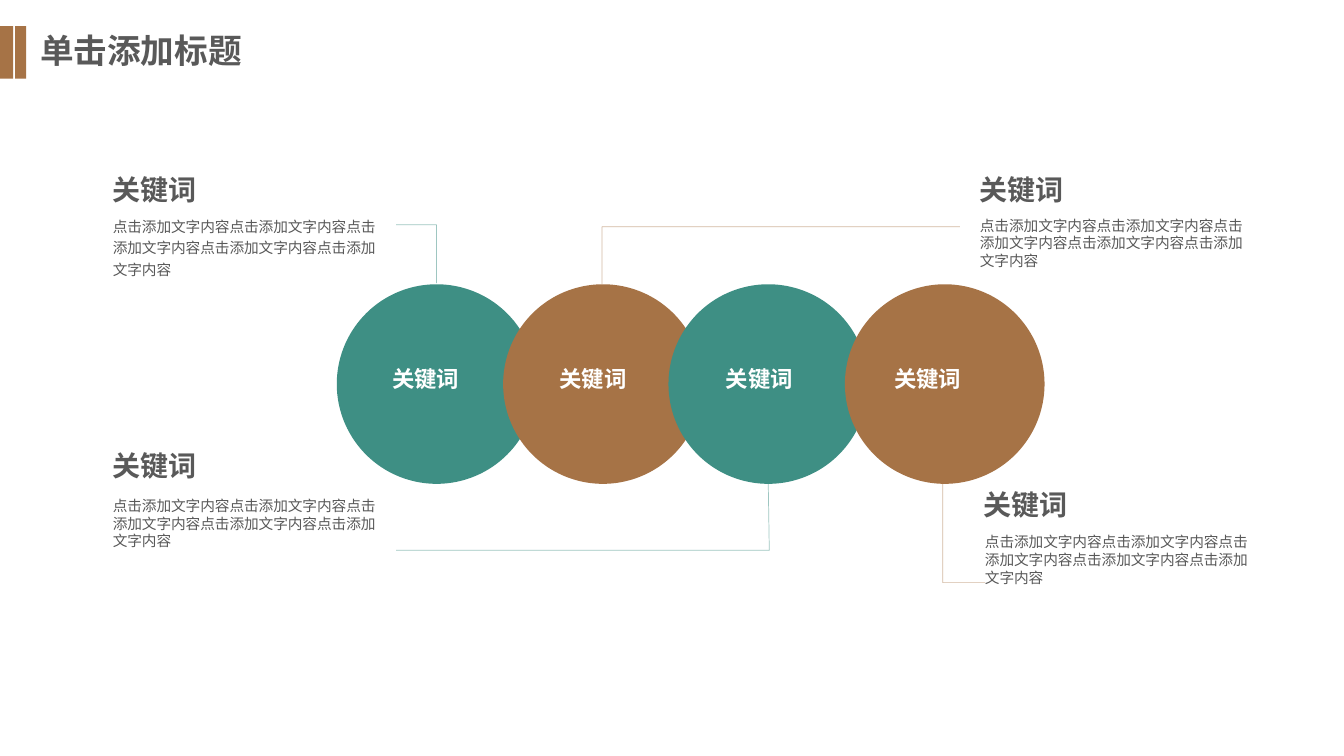
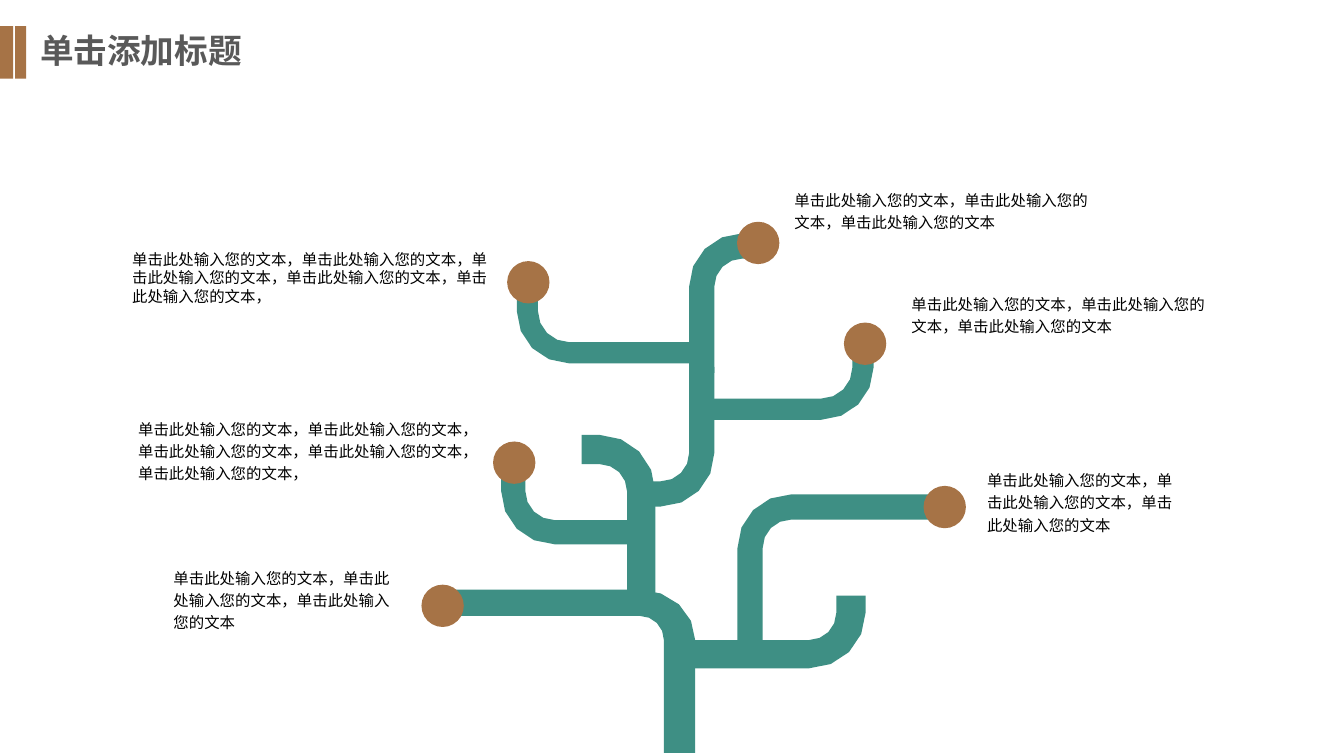
from itertools import pairwise
from math import cos, pi, sin

from lxml import etree
from pptx import Presentation
from pptx import util as u
from pptx.dml.color import RGBColor
from pptx.enum import shapes, text
from pptx.oxml import ns

BROWN = RGBColor(0xA6, 0x73, 0x46)
TEAL = RGBColor(0x3E, 0x8F, 0x84)
GREY = RGBColor(0x59, 0x59, 0x59)
WHITE = RGBColor(0xFF, 0xFF, 0xFF)
BLACK = RGBColor(0x00, 0x00, 0x00)
SANS = "Noto Sans CJK SC"
COLUMNS, ROWS = 13.33, 7.5
CELL = u.Inches(1)
OVAL, RECT = shapes.MSO_SHAPE.OVAL, shapes.MSO_SHAPE.RECTANGLE
GROW = text.MSO_AUTO_SIZE.SHAPE_TO_FIT_TEXT

TITLE = {"size": u.Pt(24), "bold": True, "color": GREY}
HEADING = {"size": u.Pt(20), "bold": True, "color": GREY}
DETAIL = {"size": u.Pt(10.5), "color": GREY}
LABEL = {"size": u.Pt(16), "bold": True, "color": WHITE}
NOTE = {"size": u.Pt(11), "color": BLACK}
NOTE_FRAME = {"margin_left": u.Inches(0.07), "margin_right": u.Inches(0.07),
              "margin_top": u.Inches(0.04), "margin_bottom": u.Inches(0.04),
              "auto_size": GROW}


def block(slide, box, kind=None, fill=None):
    place = [round(CELL * cells) for cells in box]
    if kind is None:
        return slide.shapes.add_textbox(*place)
    shape = slide.shapes.add_shape(kind, *place)
    shape.shadow.inherit = False
    shape.fill.solid()
    shape.fill.fore_color.rgb = fill
    shape.line.fill.background()
    return shape


def write(shape, words, style, spacing=None, frame={}):
    body = shape.text_frame
    for key, value in {"word_wrap": True, "vertical_anchor": text.MSO_ANCHOR.TOP, **frame}.items():
        setattr(body, key, value)
    paragraph = body.paragraphs[0]
    paragraph.alignment = text.PP_ALIGN.LEFT
    paragraph.line_spacing = spacing
    run = paragraph.add_run()
    run.text = words
    for key, value in {"name": SANS, **style}.items():
        if key == "color":
            run.font.color.rgb = value
        else:
            setattr(run.font, key, value)


deck = Presentation()
deck.slide_width = round(CELL * COLUMNS)
deck.slide_height = round(CELL * ROWS)
chain, tree = [deck.slides.add_slide(deck.slide_layouts[6]) for _ in range(2)]

for slide in (chain, tree):
    write(block(slide, (0.3, 0.25, 3.3, 0.53)), "单击添加标题", TITLE, frame={"auto_size": GROW})
    for left, width in ((0, 0.13), (0.15, 0.11)):
        block(slide, (left, 0.26, width, 0.52), RECT, BROWN)

for left, heading_top, detail_left, detail_top, spacing in (
    (1.02, 1.53, 1.02, 2.08, 1.2),
    (9.62, 1.53, 9.62, 2.1, None),
    (9.66, 4.65, 9.67, 5.24, None),
    (1.02, 4.27, 1.02, 4.88, None),
):
    write(block(chain, (left, heading_top, 2.91, 0.41)), "关键词", HEADING, 1.4)
    write(block(chain, (detail_left, detail_top, 2.91, 1.32)), "点击添加文字内容" * 5, DETAIL, spacing)

for color, route in (
    (TEAL, ((4.33, 2.81), (4.33, 2.23), (3.93, 2.23))),
    (BROWN, ((5.97, 2.82), (5.97, 2.25), (9.52, 2.25))),
    (TEAL, ((7.62, 4.8), (7.63, 5.46), (3.93, 5.46))),
    (BROWN, ((9.35, 4.8), (9.35, 5.78), (9.77, 5.78))),
):
    for start, end in pairwise(route):
        ends = [round(CELL * cells) for cells in start + end]
        leader = chain.shapes.add_connector(shapes.MSO_CONNECTOR.STRAIGHT, *ends)
        leader.line.width = u.Pt(0.5)
        leader.line.color.rgb = color
        properties = leader._element.spPr
        tint = properties.find(".//" + ns.qn("a:srgbClr"))
        etree.SubElement(tint, ns.qn("a:alpha"), val="50000")
        etree.SubElement(properties, ns.qn("a:effectLst"))

for color, circle_left, label_left in (
    (TEAL, 3.34, 3.79), (BROWN, 4.99, 5.45), (TEAL, 6.63, 7.1), (BROWN, 8.38, 8.77),
):
    block(chain, (circle_left, 2.82, 1.98, 1.98), OVAL, color)
    write(block(chain, (label_left, 3.57, 1.28, 0.59), RECT, color), "关键词", LABEL)

FINE = 1000
STEPS = 4
for x, tip, bend, end, stem, arm, radius in (
    (6.74, 7.47, 5.98, 4.36, 0.31, 0.26, 0.24),
    (8.44, 5.91, 6.49, 6.74, 0.29, 0.28, 0.27),
    (8.56, 3.48, 4.06, 6.98, 0.21, 0.21, 0.31),
    (6.36, 6.01, 4.46, 5.77, 0.28, 0.29, 0.27),
    (7.44, 6.54, 5.03, 9.37, 0.25, 0.25, 0.28),
    (5.23, 2.92, 3.5, 6.9, 0.21, 0.21, 0.31),
    (5.09, 4.7, 5.28, 6.35, 0.24, 0.24, 0.29),
    (6.96, 3.64, 4.9, 6.38, 0.25, 0.25, 0.28),
    (6.96, 3.7, 2.44, 7.55, 0.25, 0.25, 0.28),
):
    across = 1 if end > x else -1
    along = 1 if tip > bend else -1
    hub_x = x + across * (stem / 2 + radius)
    hub_y = bend + along * (arm / 2 + radius)
    outer, inner = [
        [(hub_x - across * wide * cos(pi / 2 * step / STEPS),
          hub_y - along * high * sin(pi / 2 * step / STEPS)) for step in range(STEPS + 1)]
        for wide, high in ((radius + stem, radius + arm), (radius, radius))
    ]
    outline = [(x - across * stem / 2, tip), *outer, (end, bend - along * arm / 2),
               (end, bend + along * arm / 2), *reversed(inner), (x + across * stem / 2, tip)]
    points = [(px * FINE, py * FINE) for px, py in outline]
    pen = tree.shapes.build_freeform(*points[0], scale=CELL / FINE)
    pen.add_line_segments(points[1:], close=True)
    branch = pen.convert_to_shape()
    branch.shadow.inherit = False
    branch.fill.solid()
    branch.fill.fore_color.rgb = TEAL
    branch.line.fill.background()

for left, top in ((4.18, 5.8), (4.89, 4.38), (9.16, 4.82), (8.37, 3.2), (5.03, 2.59), (7.31, 2.2)):
    block(tree, (left, top, 0.42, 0.42), OVAL, BROWN)

SENTENCE = "单击此处输入您的文本"
THREE = "，".join([SENTENCE] * 3)
FIVE = (SENTENCE + "，") * 5
for box, words, spacing, font in (
    ((1.65, 5.57, 2.41, 0.73), THREE, 1.2, SANS),
    ((1.3, 4.09, 3.53, 0.73), FIVE, 1.2, SANS),
    ((9.72, 4.6, 2.13, 0.73), THREE, 1.2, SANS),
    ((8.97, 2.85, 3.13, 0.51), THREE, 1.2, SANS),
    ((1.24, 2.44, 3.71, 0.62), FIVE, None, "Calibri"),
    ((7.81, 1.82, 3.13, 0.51), THREE, 1.2, SANS),
):
    write(block(tree, box), words, {**NOTE, "name": font}, spacing, NOTE_FRAME)

deck.save("out.pptx")
